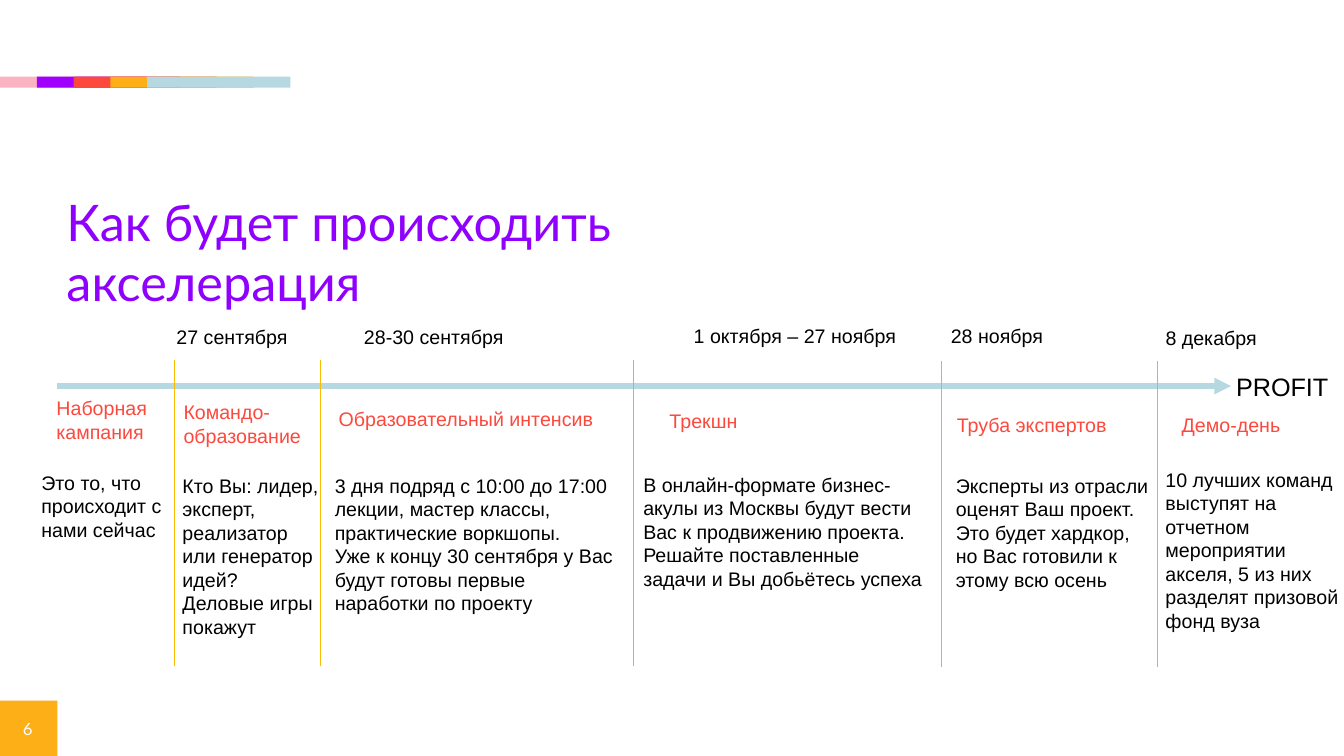
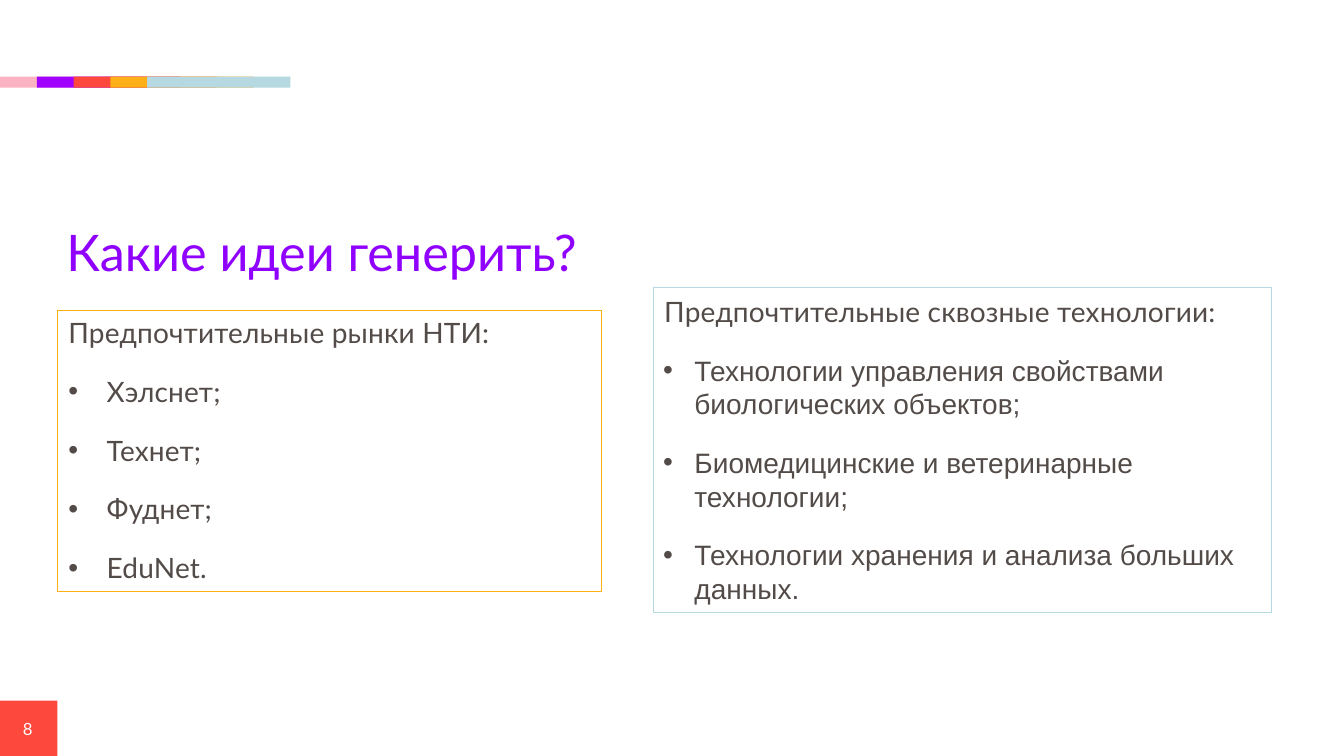
"""Build two accelerator slides: a stage timeline and the preferred idea fields."""
from dataclasses import dataclass

from lxml import etree
from pptx import Presentation
from pptx.dml.color import RGBColor
from pptx.enum.shapes import MSO_CONNECTOR, MSO_SHAPE
from pptx.enum.text import MSO_ANCHOR, MSO_AUTO_SIZE, PP_ALIGN
from pptx.oxml.ns import qn
from pptx.util import Inches, Pt

RECTANGLE = MSO_SHAPE.RECTANGLE
STRAIGHT = MSO_CONNECTOR.STRAIGHT
TOP, MIDDLE = MSO_ANCHOR.TOP, MSO_ANCHOR.MIDDLE
LEFT, CENTER = PP_ALIGN.LEFT, PP_ALIGN.CENTER
GROW, FIXED = MSO_AUTO_SIZE.SHAPE_TO_FIT_TEXT, MSO_AUTO_SIZE.NONE


@dataclass(frozen=True)
class Theme:
    heading_font: str = "Lato"
    body_font: str = "Arial"
    title_size: int = 36
    panel_size: int = 20
    goal_size: int = 18
    body_size: int = 14
    number_size: int = 12
    pink: str = "FBB3C1"
    violet: str = "9F00FF"
    title: str = "8F00FF"
    red: str = "FD493D"
    orange: str = "FCAF17"
    blue: str = "B5D8E1"
    gold: str = "F9BC00"
    gray: str = "B2B2B2"
    text: str = "000000"
    panel_text: str = "524B48"
    white: str = "FFFFFF"


THEME = Theme()


def write_text(shape, lines, font, size, color, align=LEFT, inset=0.05, **frame_format):
    frame = shape.text_frame
    values = {
        "word_wrap": True, "auto_size": GROW, "vertical_anchor": TOP,
        "margin_left": Inches(inset), "margin_right": Inches(inset),
        "margin_top": Inches(0.05), "margin_bottom": Inches(0.05),
    }
    values.update(frame_format)
    for name, value in values.items():
        setattr(frame, name, value)
    for index, line in enumerate(lines):
        para = frame.add_paragraph() if index else frame.paragraphs[0]
        para.alignment = align
        span = para.add_run()
        span.text = line
        for name, value in {"name": font, "size": Pt(size)}.items():
            setattr(span.font, name, value)
        span.font.color.rgb = RGBColor.from_string(color)
    return frame.paragraphs


def add_line(page, start, end, color, width):
    line = page.shapes.add_connector(STRAIGHT, *map(Inches, start + end))
    line.line.color.rgb = RGBColor.from_string(color)
    line.line.width = Pt(width)
    etree.SubElement(line._element.spPr, qn("a:effectLst"))
    return line


deck = Presentation()
deck.slide_width, deck.slide_height = Inches(13.33), Inches(7.5)

BAND_COLORS = [THEME.pink, THEME.violet, THEME.red, THEME.orange, THEME.blue]
BAND_STEP = 1.46 / 4

PAGES = [
    ("6", THEME.orange, "Как будет происходить акселерация", 1.84, 1.31),
    ("8", THEME.red, "Какие идеи генерить?", 2.14, 0.71),
]
pages = []
for number, badge_color, title, title_top, title_height in PAGES:
    page = deck.slides.add_slide(deck.slide_layouts[6])
    pages.append(page)
    blocks = [(-0.02, 6.95, 0.59, 0.55, badge_color)]
    blocks += [(index * BAND_STEP, 0.76, 1.42, 0.11, color)
               for index, color in enumerate(BAND_COLORS)]
    for *place, color in blocks:
        block = page.shapes.add_shape(RECTANGLE, *map(Inches, place))
        block.shadow.inherit = False
        block.fill.solid()
        block.fill.fore_color.rgb = RGBColor.from_string(color)
        block.line.fill.background()
        if place[1] == 6.95:
            write_text(block, [number], THEME.heading_font, THEME.number_size,
                       THEME.white, CENTER, auto_size=FIXED, vertical_anchor=MIDDLE)
    box = page.shapes.add_textbox(
        *map(Inches, (0.61, title_top, 7.13, title_height)))
    write_text(box, [title], THEME.heading_font, THEME.title_size, THEME.title,
               vertical_anchor=MIDDLE)

timeline, ideas = pages

arrow = add_line(timeline, (0.57, 3.83), (12.21, 3.83), THEME.blue, 4)
etree.SubElement(arrow.line._get_or_add_ln(), qn("a:tailEnd"), type="triangle")

DIVIDERS = [
    (1.73, 3.57, THEME.gold),
    (3.18, 3.57, THEME.gold),
    (6.28, 3.57, THEME.gray),
    (9.34, 3.58, THEME.gray),
    (11.48, 3.58, THEME.gray),
]
for left, top, color in DIVIDERS:
    add_line(timeline, (left, top), (left, top + 3.04), color, 0.75)

DATES = [
    (1.7, 3.17, 1.21, 0.34, ["27 сентября"]),
    (3.56, 3.17, 1.49, 0.34, ["28-30 сентября"]),
    (6.83, 3.16, 2.12, 0.34, ["1 октября – 27 ноября"]),
    (9.38, 3.16, 1.02, 0.34, ["28 ноября"]),
    (11.51, 3.18, 1.01, 0.34, ["8 декабря"]),
]
STAGES = [
    (0.51, 3.88, 1.06, 0.57, ["Наборная", "кампания"]),
    (1.77, 3.92, 1.28, 0.57, ["Командо-", "образование"]),
    (3.31, 3.99, 2.66, 0.34, ["Образовательный интенсив"]),
    (6.59, 4.01, 0.79, 0.34, ["Трекшн"]),
    (9.44, 4.05, 1.61, 0.34, ["Труба экспертов"]),
    (11.67, 4.05, 1.08, 0.34, ["Демо-день"]),
]
GOAL = [(12.21, 3.63, 1.03, 0.4, ["PROFIT"])]
SHORT_DETAILS = [
    (0.36, 4.62, 1.36, 0.81, ["Это то, что", "происходит с", "нами сейчас"]),
    (1.76, 4.65, 1.51, 1.75, [
        "Кто Вы: лидер,", "эксперт,", "реализатор", "или генератор",
        "идей?", "Деловые игры", "покажут"]),
]
LONG_DETAILS = [
    (3.27, 4.65, 2.92, 1.51, [
        "3 дня подряд с 10:00 до 17:00",
        "лекции, мастер классы, практические воркшопы.",
        "Уже к концу 30 сентября у Вас будут готовы первые наработки по проекту"]),
    (6.33, 4.64, 2.92, 1.28, [
        "В онлайн-формате бизнес-акулы из Москвы будут вести "
        "Вас к продвижению проекта.",
        "Решайте поставленные задачи и Вы добьётесь успеха"]),
    (9.43, 4.65, 2.08, 1.28, [
        "Эксперты из отрасли", "оценят Ваш проект.",
        "Это будет хардкор, но Вас готовили к этому всю осень"]),
    (11.51, 4.59, 1.83, 1.99, [
        "10 лучших команд",
        "выступят на отчетном мероприятии акселя, 5 из них "
        "разделят призовой фонд вуза"]),
]
LABEL_GROUPS = [
    (DATES, THEME.text, THEME.body_size, False),
    (STAGES, THEME.red, THEME.body_size, False),
    (GOAL, THEME.text, THEME.goal_size, False),
    (SHORT_DETAILS, THEME.text, THEME.body_size, False),
    (LONG_DETAILS, THEME.text, THEME.body_size, True),
]
for labels, color, size, wrap in LABEL_GROUPS:
    for *place, lines in labels:
        box = timeline.shapes.add_textbox(*map(Inches, place))
        write_text(box, lines, THEME.body_font, size, color, word_wrap=wrap)

PANELS = [
    ((0.57, 3.08, 5.4, 2.79), THEME.orange, THEME.heading_font, 0.39, -0.38, 1.0, 18, 10,
     ["Предпочтительные рынки НТИ:", "Хэлснет;", "Технет;", "Фуднет;", "EduNet."]),
    ((6.48, 2.85, 6.13, 3.23), THEME.blue, THEME.body_font, 0.31, -0.31, 1.06, 21.3, 0,
     ["Предпочтительные сквозные технологии:",
      "Технологии управления свойствами биологических объектов;",
      "Биомедицинские и ветеринарные технологии;",
      "Технологии хранения и анализа больших данных."]),
]
for place, color, font, margin, indent, spacing, lead_space, tracking, lines in PANELS:
    panel = ideas.shapes.add_shape(RECTANGLE, *map(Inches, place))
    panel.shadow.inherit = False
    panel.fill.background()
    panel.line.color.rgb = RGBColor.from_string(color)
    panel.line.width = Pt(0.75)
    heading, *items = write_text(panel, lines, font, THEME.panel_size,
                                 THEME.panel_text, inset=0.1)
    heading.line_spacing = spacing
    heading.space_before = Pt(lead_space)
    heading.runs[0].font.name = THEME.heading_font
    heading.runs[0].font._element.set("spc", "10")
    heading._p.get_or_add_pPr().set("marL", str(Inches(0.01)))
    for para in items:
        para.space_before = Pt(18)
        para.runs[0].font._element.set("spc", str(tracking))
        properties = para._p.get_or_add_pPr()
        properties.set("marL", str(Inches(margin)))
        properties.set("indent", str(Inches(indent)))
        etree.SubElement(properties, qn("a:buFont"), typeface=THEME.body_font)
        etree.SubElement(properties, qn("a:buChar"), char="•")

deck.save("out.pptx")
